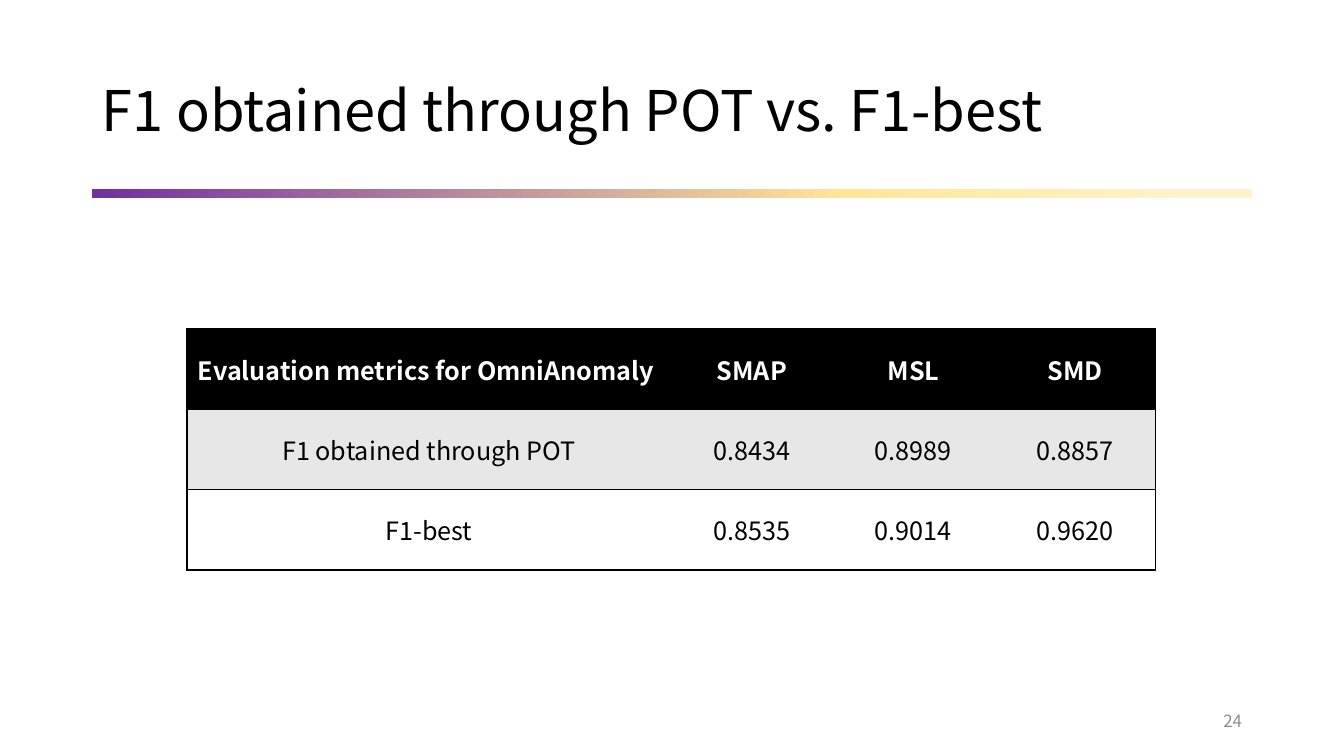
from lxml.etree import SubElement
from pptx import Presentation
from pptx.dml.color import RGBColor
from pptx.enum.shapes import MSO_SHAPE as Shape
from pptx.enum.text import MSO_ANCHOR as Anchor, PP_ALIGN as Align
from pptx.oxml import parse_xml
from pptx.oxml.ns import nsdecls, qn
from pptx.util import Pt

PX = 914400 / 100.8
FONT = "Noto Sans CJK SC"
BLACK = RGBColor(0x00, 0x00, 0x00)
WHITE = RGBColor(0xFF, 0xFF, 0xFF)
GRAY = RGBColor(0x8C, 0x8C, 0x8C)
PALE = RGBColor(0xE7, 0xE7, 0xE7)
PURPLE = RGBColor(0x70, 0x30, 0xA0)
GOLD = RGBColor(0xFF, 0xE6, 0x99)
CREAM = RGBColor(0xFF, 0xF2, 0xCC)
STOPS = [(0, PURPLE), (65, GOLD), (94, CREAM), (100, CREAM)]
PLAIN = "{2D5ABB26-0587-4C30-8999-92F81FD0307C}"
ROWS = [
    ("Evaluation metrics for OmniAnomaly ", "SMAP", "MSL", "SMD"),
    ("F1 obtained through POT", "0.8434", "0.8989", "0.8857"),
    ("F1-best", "0.8535", "0.9014", "0.9620"),
]
LOOKS = [(BLACK, WHITE, True), (PALE, BLACK, False), (WHITE, BLACK, False)]


def emu(*sizes):
    return [round(size * PX) for size in sizes]


def write(frame, text, size, color, align, bold=False):
    para = frame.paragraphs[0]
    para.alignment = align
    run = para.add_run()
    run.text = text
    font = run.font
    font.name, font.size, font.bold = FONT, Pt(size), bold
    font.color.rgb = color
    props = run._r.get_or_add_rPr()
    SubElement(props, qn("a:ea")).set("typeface", FONT)
    return para


def add_label(slide, box, text, size, color, align):
    frame = slide.shapes.add_textbox(*emu(*box)).text_frame
    frame.word_wrap = True
    frame.vertical_anchor = Anchor.MIDDLE
    return write(frame, text, size, color, align)


def add_bar(slide, box):
    bar = slide.shapes.add_shape(Shape.RECTANGLE, *emu(*box))
    bar.shadow.inherit = False
    bar.line.fill.background()
    stops = "".join(
        f'<a:gs pos="{pos * 1000}"><a:srgbClr val="{color}"/></a:gs>'
        for pos, color in STOPS
    )
    grad = parse_xml(
        f'<a:gradFill {nsdecls("a")} rotWithShape="1"><a:gsLst>{stops}</a:gsLst>'
        '<a:lin ang="0" scaled="0"/></a:gradFill>'
    )
    bar.element.spPr.insert(2, grad)


def add_edges(cell, sides):
    props = cell._tc.get_or_add_tcPr()
    for spot, side in enumerate(sides):
        props.insert(spot, parse_xml(
            f'<a:ln{side} {nsdecls("a")} w="{Pt(1)}"><a:solidFill>'
            f'<a:srgbClr val="{BLACK}"/></a:solidFill></a:ln{side}>'
        ))


def add_scores(slide, box):
    left, top, width, height = box
    count = len(ROWS[0])
    frame = slide.shapes.add_table(len(ROWS), count, *emu(*box))
    table = frame.table
    table.horz_banding = False
    frame.element.find(".//" + qn("a:tableStyleId")).text = PLAIN
    first = width // 2
    rest = (width - first) / (count - 1)
    for col, size in zip(table.columns, emu(first, *[rest] * (count - 1))):
        col.width = size
    for row in table.rows:
        row.height = round(height / len(ROWS) * PX)
    for r, (texts, (fill, ink, bold)) in enumerate(zip(ROWS, LOOKS)):
        for c, text in enumerate(texts):
            cell = table.cell(r, c)
            cell.fill.solid()
            cell.fill.fore_color.rgb = fill
            cell.vertical_anchor = Anchor.MIDDLE
            write(cell.text_frame, text, 18, ink, Align.CENTER, bold)
            ends = {0: "L", count - 1: "R"}
            add_edges(cell, ends.get(c, "") + "TB")


def add_head(slide, box):
    left, top, width, height = box
    para = add_label(slide, box, "F1 obtained through POT vs. F1-best",
                     40, BLACK, Align.LEFT)
    para.line_spacing = 0.9
    add_bar(slide, (left, top + height + 3, width, 9))


def add_foot(slide, box):
    add_label(slide, box, "24", 12, GRAY, Align.RIGHT)


def main():
    deck = Presentation()
    deck.slide_width, deck.slide_height = emu(1344, 756)
    slide = deck.slides.add_slide(deck.slide_layouts[6])
    add_head(slide, (92, 40, 1160, 146))
    add_scores(slide, (187, 329, 969, 241))
    add_foot(slide, (950, 701, 302, 40))
    deck.save("out.pptx")


if __name__ == "__main__":
    main()
